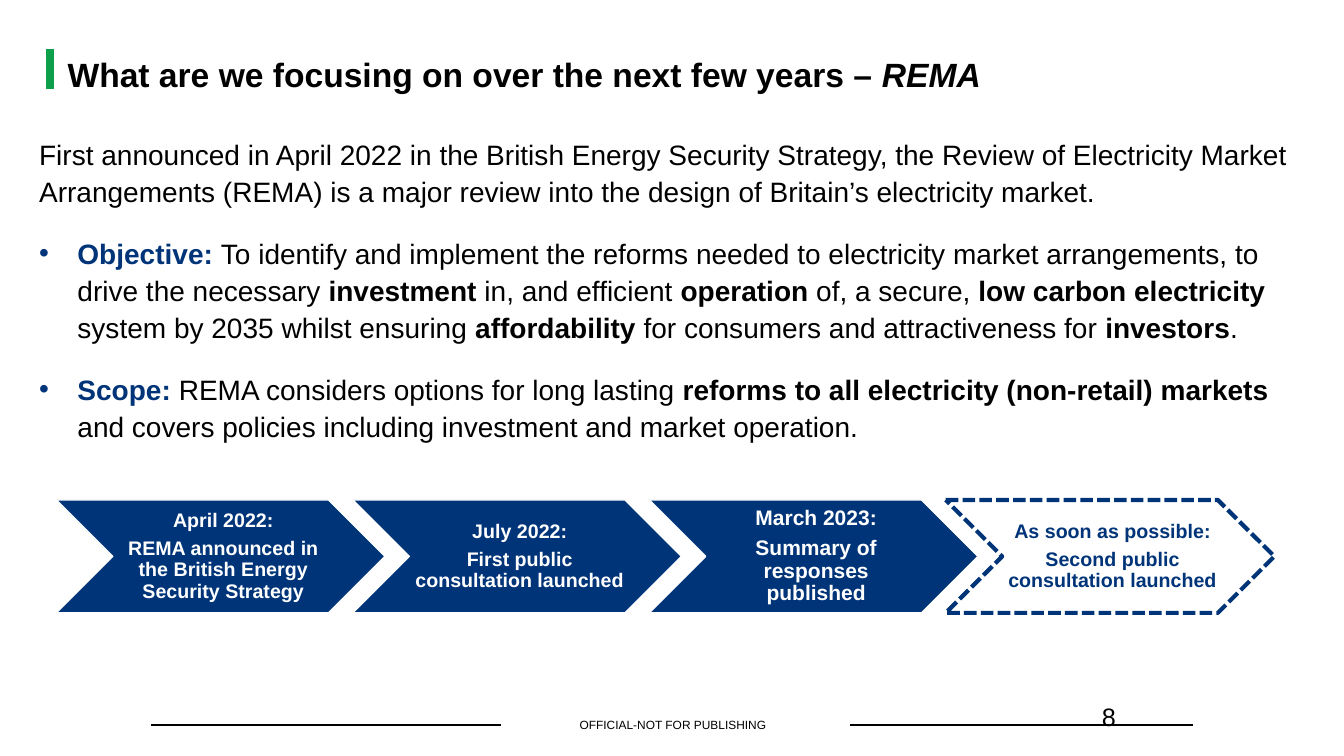
from lxml.etree import SubElement
from pptx import Presentation
from pptx.dml.color import RGBColor
from pptx.enum.dml import MSO_LINE
from pptx.enum.shapes import MSO_CONNECTOR, MSO_SHAPE
from pptx.enum.text import MSO_ANCHOR, MSO_AUTO_SIZE, PP_ALIGN
from pptx.oxml.ns import qn
from pptx.util import Inches, Pt

COLORS = {"text": "000000", "navy": "003479", "green": "0DA04A", "white": "FFFFFF"}
TITLE_ONLY = 5

INTRO = [("First announced in April 2022 in the British Energy Security Strategy, the Review of "
          "Electricity Market Arrangements (REMA) is a major review into the design of "
          "Britain’s electricity market.", "")]
BULLETS = [
    [("Objective: ", "label"),
     ("To identify and implement the reforms needed to electricity market arrangements, "
      "to drive the necessary ", ""),
     ("investment", "bold"), (" in, and efficient ", ""),
     ("operation", "bold"), (" of, a secure, ", ""),
     ("low carbon electricity", "bold"), (" system by 2035 whilst ensuring ", ""),
     ("affordability", "bold"), (" for consumers and attractiveness for ", ""),
     ("investors", "bold"), (".", "")],
    [("Scope: ", "label"), ("REMA considers options for long lasting ", ""),
     ("reforms to all electricity (non-retail) markets ", "bold"),
     ("and covers policies including investment and market operation.", "")],
]
RUN_STYLES = {
    "": {"bold": False},
    "bold": {"bold": True},
    "label": {"bold": True, "color": "navy"},
    "title": {"bold": True, "size": 24},
    "title italic": {"bold": True, "italic": True, "size": 24},
}
# date, event, text size, planned
MILESTONES = [
    ("April 2022:", "REMA announced in the British Energy Security Strategy", 14, False),
    ("July 2022:", "First public consultation launched", 14, False),
    ("March 2023:", "Summary of responses published", 15, False),
    ("As soon as possible:", "Second public consultation launched", 14, True),
]


def rgb(name):
    return RGBColor.from_string(COLORS[name])


def add_run(p, text, size=20, color="text", **formats):
    r = p.add_run()
    r.text = text
    r.font.color.rgb = rgb(color)
    for name, value in {"name": "Arial", "size": Pt(size), **formats}.items():
        setattr(r.font, name, value)


def format_paragraph(p, **formats):
    for name, value in formats.items():
        setattr(p, name, value)


def set_frame(tf, anchor=MSO_ANCHOR.TOP, margins=(0.1, 0.05, 0.1, 0.05)):
    """Wrap the text, anchor it and set left, top, right and bottom margins."""
    tf.word_wrap = True
    tf.auto_size = MSO_AUTO_SIZE.NONE
    tf.vertical_anchor = anchor
    for side, margin in zip(("left", "top", "right", "bottom"), margins):
        setattr(tf, f"margin_{side}", Inches(margin))


def add_text_box(s, box, **frame):
    tf = s.shapes.add_textbox(*map(Inches, box)).text_frame
    set_frame(tf, **frame)
    return tf


def next_paragraph(tf):
    return tf.paragraphs[0] if not tf.paragraphs[0].runs else tf.add_paragraph()


def add_bullet(p):
    pPr = p._p.get_or_add_pPr()
    pPr.set("marL", str(Inches(0.38)))
    pPr.set("indent", str(-Inches(0.38)))
    SubElement(pPr, qn("a:buFont"), typeface="Arial")
    SubElement(pPr, qn("a:buChar"), char="•")


def add_shape(s, kind, box, fill, line, width):
    shape = s.shapes.add_shape(kind, *map(Inches, box))
    shape.shadow.inherit = False
    shape.fill.solid()
    shape.fill.fore_color.rgb = rgb(fill)
    shape.line.color.rgb = rgb(line)
    shape.line.width = Pt(width)
    return shape


def add_rule(s, x1, x2, y):
    line = s.shapes.add_connector(MSO_CONNECTOR.STRAIGHT, *map(Inches, (x1, y, x2, y)))
    line.line.color.rgb = rgb("text")
    line.line.width = Pt(1.5)
    SubElement(line._element.spPr, qn("a:effectLst"))


def add_title(s):
    title = s.shapes.title
    for name, value in zip(("left", "top", "width", "height"), (0.57, 0.53, 12.05, 0.75)):
        setattr(title, name, Inches(value))
    set_frame(title.text_frame)
    p = title.text_frame.paragraphs[0]
    format_paragraph(p, alignment=PP_ALIGN.LEFT, line_spacing=0.9)
    add_run(p, "What are we focusing on over the next few years – ", **RUN_STYLES["title"])
    add_run(p, "REMA", **RUN_STYLES["title italic"])
    add_shape(s, MSO_SHAPE.RECTANGLE, (0.46, 0.49, 0.07, 0.39), "green", "green", 0.75)


def add_body(s):
    tf = add_text_box(s, (0.29, 1.28, 12.6, 3.17))
    for runs in [INTRO, *BULLETS]:
        p = next_paragraph(tf)
        format_paragraph(p, line_spacing=1.1, space_after=Pt(18))
        if runs is not INTRO:
            add_bullet(p)
        for text, style in runs:
            add_run(p, text, **RUN_STYLES[style])


def add_milestone(s, left, date, event, size, planned):
    top, width, height = 4.96, 3.26, 1.12
    fill, ink, line_width = ("white", "navy", 3) if planned else ("navy", "white", 1)
    chevron = add_shape(s, MSO_SHAPE.CHEVRON, (left, top, width, height), fill, ink, line_width)
    if planned:
        chevron.line.dash_style = MSO_LINE.SQUARE_DOT
        color = chevron.fill._xPr.find(qn("a:solidFill"))[0]
        SubElement(color, qn("a:alpha"), val="50000")
    tf = add_text_box(s, (left + height / 2, top, 2.15, height),
                      anchor=MSO_ANCHOR.MIDDLE, margins=(0.06, 0.02, 0.02, 0.02))
    for text in (date, event):
        p = next_paragraph(tf)
        format_paragraph(p, alignment=PP_ALIGN.CENTER, line_spacing=0.9,
                         space_after=Pt(5))
        add_run(p, text, size, ink, bold=True)


def add_footer(s):
    tf = add_text_box(s, (5.11, 7.12, 3.13, 0.14), anchor=MSO_ANCHOR.MIDDLE,
                      margins=(0, 0, 0, 0))
    tf.paragraphs[0].alignment = PP_ALIGN.CENTER
    add_run(tf.paragraphs[0], "OFFICIAL-NOT FOR PUBLISHING", 8.5)
    for x1, x2 in ((1.5, 4.97), (8.43, 11.83)):
        add_rule(s, x1, x2, 7.19)
    number = add_text_box(s, (10.83, 6.91, 0.55, 0.4))
    add_run(number.paragraphs[0], "8", 18)


def main():
    prs = Presentation()
    prs.slide_width, prs.slide_height = Inches(13.33), Inches(7.5)
    s = prs.slides.add_slide(prs.slide_layouts[TITLE_ONLY])
    add_footer(s)
    add_title(s)
    add_body(s)
    for i, milestone in enumerate(MILESTONES):
        add_milestone(s, 0.56 + i * 2.94, *milestone)
    prs.save("out.pptx")


if __name__ == "__main__":
    main()
